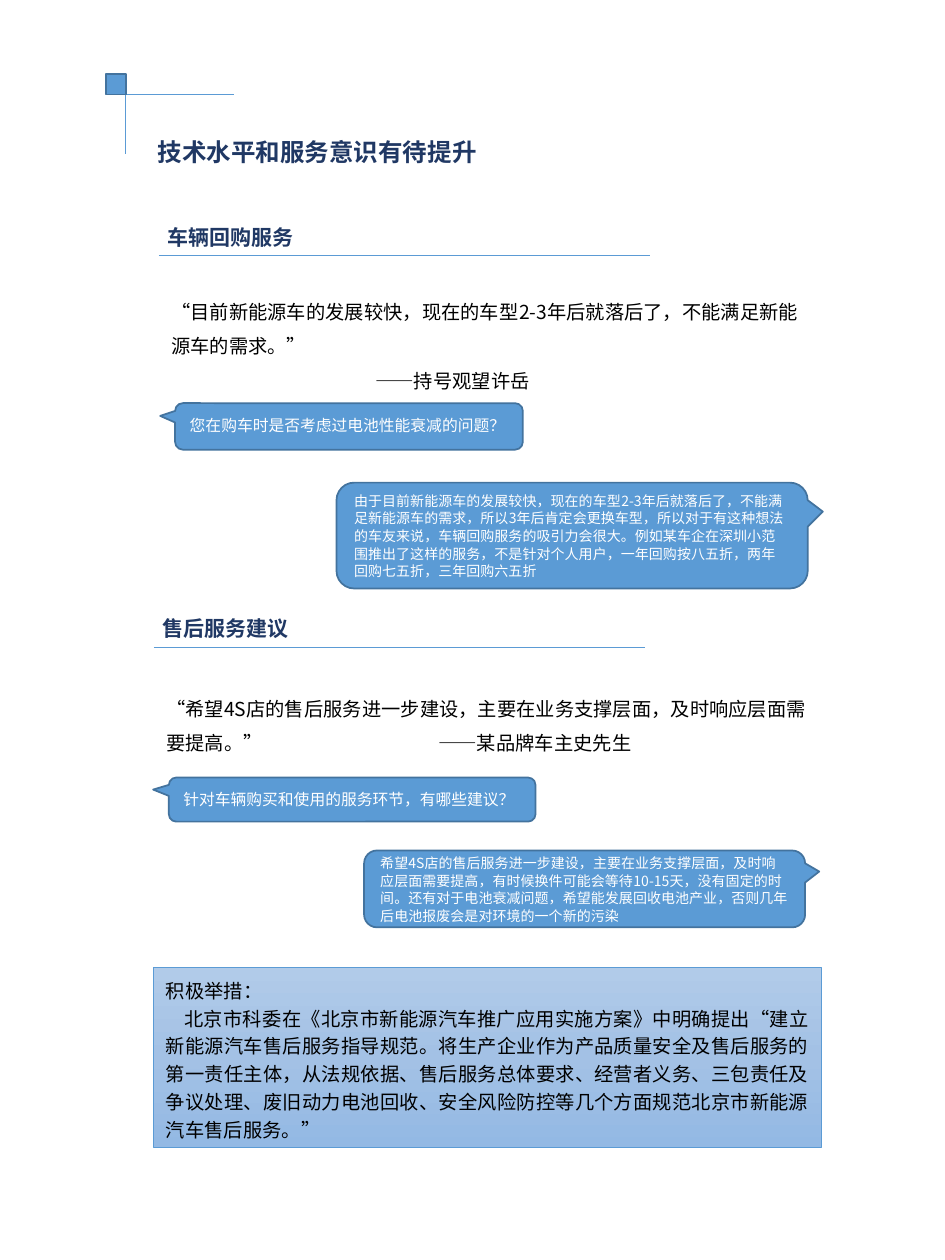
from copy import deepcopy

from lxml import etree
from pptx import Presentation
from pptx.dml.color import RGBColor
from pptx.enum.shapes import MSO_CONNECTOR, MSO_SHAPE
from pptx.enum.text import MSO_ANCHOR, PP_ALIGN
from pptx.oxml.ns import qn
from pptx.util import Pt

FONT = "Noto Sans CJK SC"
BLUE = RGBColor(0x5B, 0x9B, 0xD5)
EDGE = RGBColor(0x43, 0x73, 0x9E)
NAVY = RGBColor(0x20, 0x38, 0x64)
BLACK = RGBColor(0, 0, 0)
WHITE = RGBColor(0xFF, 0xFF, 0xFF)
FADE = (RGBColor(0xB1, 0xCB, 0xE9), RGBColor(0xA3, 0xC1, 0xE5), RGBColor(0x93, 0xB9, 0xE4))
LEFT, JUSTIFY = PP_ALIGN.LEFT, PP_ALIGN.JUSTIFY
MIDDLE, TOP = MSO_ANCHOR.MIDDLE, MSO_ANCHOR.TOP
RECT, BUBBLE = MSO_SHAPE.RECTANGLE, MSO_SHAPE.ROUNDED_RECTANGULAR_CALLOUT
STRAIGHT = MSO_CONNECTOR.STRAIGHT

PARTS = [
    {
        "box": (88.6, 124.6, 218, 21.6),
        "head": "车辆回购服务",
        "quote": (2.2, 36.7, 373.7, 67),
        "lines": ["“目前新能源车的发展较快，现在的车型2-3年后就落后了，不能满足新能源车的需求。”",
                  "\t——持号观望许岳"],
        "tab": 116.6,
        "ask": (11.5, 105.8, 198.7, 26.6),
        "ask_text": "您在购车时是否考虑过电池性能衰减的问题？",
        "reply": (103.7, 151.2, 269.3, 60.5),
        "reply_text": "由于目前新能源车的发展较快，现在的车型2-3年后就落后了，不能满足新能源车的需求，"
                      "所以3年后肯定会更换车型，所以对于有这种想法的车友来说，车辆回购服务的吸引力会很大。"
                      "例如某车企在深圳小范围推出了这样的服务，不是针对个人用户，一年回购按八五折，"
                      "两年回购七五折，三年回购六五折",
    },
    {
        "box": (85.7, 348.5, 218, 21.6),
        "head": "售后服务建议",
        "quote": (2.2, 39.6, 382.3, 47.5),
        "lines": ["“希望4S店的售后服务进一步建设，主要在业务支撑层面，及时响应层面需要提高。”"
                  "\t——某品牌车主史先生"],
        "tab": 155.5,
        "ask": (10.8, 95.8, 209.5, 25.2),
        "ask_text": "针对车辆购买和使用的服务环节，有哪些建议？",
        "reply": (122.4, 137.5, 252, 43.9),
        "reply_text": "希望4S店的售后服务进一步建设，主要在业务支撑层面，及时响应层面需要提高，"
                      "有时候换件可能会等待10-15天，没有固定的时间。还有对于电池衰减问题，"
                      "希望能发展回收电池产业，否则几年后电池报废会是对环境的一个新的污染",
    },
]
PLAN = [
    "积极举措：",
    "北京市科委在《北京市新能源汽车推广应用实施方案》中明确提出“建立新能源汽车售后服务指导规范。"
    "将生产企业作为产品质量安全及售后服务的第一责任主体，从法规依据、售后服务总体要求、经营者义务、"
    "三包责任及争议处理、废旧动力电池回收、安全风险防控等几个方面规范北京市新能源汽车售后服务。”",
]


def points(box):
    """Turn a box of plain numbers into lengths."""
    return [Pt(n) for n in box]


def write(shape, lines, size, color, bold=False, space=None, align=LEFT, anchor=TOP):
    """Write one paragraph per line and return the paragraphs."""
    frame = shape.text_frame
    frame.word_wrap = True
    frame.vertical_anchor = anchor
    for i, line in enumerate(lines):
        para = frame.add_paragraph() if i else frame.paragraphs[0]
        para.alignment = align
        para.line_spacing = space
        run = para.add_run()
        run.text = line
        font = run.font
        font.size, font.bold, font.name = Pt(size), bold, FONT
        font.color.rgb = color
        etree.SubElement(font._element, qn("a:ea"), typeface=FONT)
    return frame.paragraphs


def rule(shapes, x1, y1, x2, y2):
    """Draw a thin blue line without a shadow."""
    line = shapes.add_connector(STRAIGHT, *points((x1, y1, x2, y2)))
    line.line.color.rgb = BLUE
    line.line.width = Pt(0.5)
    etree.SubElement(line._element.spPr, qn("a:effectLst"))


def block(shapes, kind, box, edge, width):
    """Add a flat outlined shape."""
    shape = shapes.add_shape(kind, *points(box))
    shape.shadow.inherit = False
    shape.fill.solid()
    shape.fill.fore_color.rgb = BLUE
    shape.line.color.rgb = edge
    shape.line.width = Pt(width)
    return shape


def corner(slide, box):
    """Draw the corner mark as a group of two lines and a square."""
    x, y, w, h = box
    side = 11.5
    group = slide.shapes.add_group_shape().shapes
    rule(group, x, y + side, x + w, y + side)
    rule(group, x + side - 0.5, y, x + side - 0.5, y + h)
    block(group, RECT, (x, y, side, side), EDGE, 1)


def heading(slide, box):
    """Place the slide title."""
    title = slide.shapes.title
    title.left, title.top, title.width, title.height = points(box)
    write(title, ["技术水平和服务意识有待提升"], 14, NAVY, bold=True, anchor=MIDDLE)


def bubble(slide, box, text, size, tip):
    """Draw a speech bubble whose tip points to one side."""
    shape = block(slide.shapes, BUBBLE, box, EDGE, 1)
    for i, value in enumerate((tip, -0.226, 0.167)):
        shape.adjustments[i] = value
    write(shape, [text], size, WHITE, space=Pt(10), anchor=MIDDLE)


def section(slide, box, part):
    """Place a heading, its rule, a quote, a question and a reply."""
    x, y, w, h = box

    def shift(area):
        """Move an area by the corner of the section."""
        return x + area[0], y + area[1], area[2], area[3]

    head = slide.shapes.add_textbox(*points(box))
    write(head, [part["head"]], 12, NAVY, bold=True)
    rule(slide.shapes, x + 2.2, y + h, x + 283, y + h)
    quote = slide.shapes.add_textbox(*points(shift(part["quote"])))
    for para in write(quote, part["lines"], 11, BLACK, space=1.5):
        tabs = etree.SubElement(para._p.get_or_add_pPr(), qn("a:tabLst"))
        etree.SubElement(tabs, qn("a:tab"), pos=str(Pt(part["tab"])), algn="l")
    bubble(slide, shift(part["ask"]), part["ask_text"], 9, -0.543)
    bubble(slide, shift(part["reply"]), part["reply_text"], 8, 0.532)


def summary(slide, box):
    """Place the shaded panel of measures."""
    panel = block(slide.shapes, RECT, box, BLUE, 0.5)
    panel.fill.gradient()
    panel.fill.gradient_angle = 270
    stops = panel._element.spPr.find(".//" + qn("a:gsLst"))
    stops.insert(1, deepcopy(stops[0]))
    for i, stop in enumerate(panel.fill.gradient_stops):
        stop.position = i / 2
        stop.color.rgb = FADE[i]
    paras = write(panel, PLAN, 11, BLACK, space=1.2, align=JUSTIFY, anchor=MIDDLE)
    paras[1]._p.get_or_add_pPr().set("indent", str(Pt(10.5)))


def main():
    """Build and save the slide."""
    deck = Presentation()
    deck.slide_width, deck.slide_height = Pt(540), Pt(720)
    slide = deck.slides.add_slide(deck.slide_layouts[5])
    corner(slide, (60.5, 42.5, 73.4, 45.4))
    heading(slide, (82.8, 74.2, 311.8, 24.5))
    for part in PARTS:
        section(slide, part["box"], part)
    summary(slide, (87.8, 553, 381.6, 103))
    deck.save("out.pptx")


if __name__ == "__main__":
    main()
